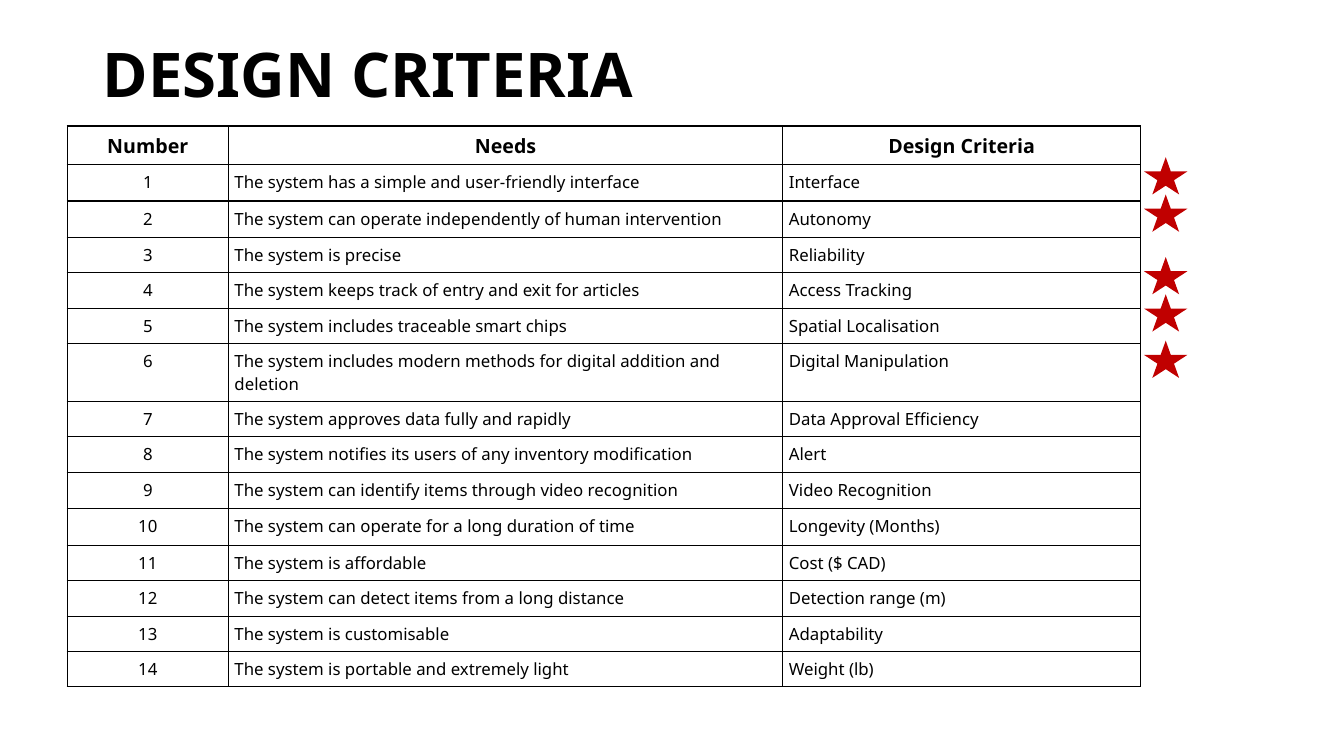
from dataclasses import dataclass

from lxml import etree
from pptx import Presentation
from pptx.dml.color import RGBColor
from pptx.enum.shapes import MSO_SHAPE
from pptx.enum.text import MSO_ANCHOR, PP_ALIGN
from pptx.oxml.ns import qn
from pptx.util import Emu, Inches, Pt

STAR = MSO_SHAPE.STAR_5_POINT
TOP = MSO_ANCHOR.TOP
LEFT, CENTER = PP_ALIGN.LEFT, PP_ALIGN.CENTER

BLACK = RGBColor(0x00, 0x00, 0x00)
WHITE = RGBColor(0xFF, 0xFF, 0xFF)
RED = RGBColor(0xC0, 0x00, 0x00)
FONT = "Noto Sans"

# Slide grid: 40 columns by 30 rows
WIDTH, HEIGHT = Inches(13.33), Inches(7.5)
COLS, ROWS = 40, 30
WIDTHS = (4.8, 16.5, 10.65)
HEAD, TALL, SHORT = 1, 1.44, 0.92
PAD = Inches(0.06)


@dataclass
class Need:
    text: str
    label: str
    height: float = SHORT


NEEDS = [
    Need("The system has a simple and user-friendly interface", "Interface", TALL),
    Need("The system can operate independently of human intervention", "Autonomy", TALL),
    Need("The system is precise", "Reliability"),
    Need("The system keeps track of entry and exit for articles", "Access Tracking", TALL),
    Need("The system includes traceable smart chips", "Spatial Localisation"),
    Need("The system includes modern methods for digital addition and deletion",
         "Digital Manipulation", TALL),
    Need("The system approves data fully and rapidly", "Data Approval Efficiency"),
    Need("The system notifies its users of any inventory modification", "Alert", TALL),
    Need("The system can identify items through video recognition", "Video Recognition", TALL),
    Need("The system can operate for a long duration of time", "Longevity (Months)", TALL),
    Need("The system is affordable", "Cost ($ CAD)"),
    Need("The system can detect items from a long distance", "Detection range (m)", TALL),
    Need("The system is customisable", "Adaptability"),
    Need("The system is portable and extremely light", "Weight (lb)"),
]
STARS = (6.24, 7.72, 10.2, 11.68, 13.52)


def col(count: float) -> Emu:
    return Emu(round(WIDTH * count / COLS))


def row(count: float) -> Emu:
    return Emu(round(HEIGHT * count / ROWS))


def write(frame, text: str, size: float, bold: bool, align) -> None:
    para = frame.paragraphs[0]
    para.alignment = align
    run = para.add_run()
    run.text = text
    font = run.font
    font.name, font.size, font.bold = FONT, Pt(size), bold
    font.color.rgb = BLACK


def edge(cell) -> None:
    """Draw a thin black line on all four sides of a cell."""
    props = cell._tc.get_or_add_tcPr()
    for index, side in enumerate(("a:lnL", "a:lnR", "a:lnT", "a:lnB")):
        line = etree.Element(qn(side), w=str(Pt(1)))
        fill = etree.SubElement(line, qn("a:solidFill"))
        etree.SubElement(fill, qn("a:srgbClr"), val=str(BLACK))
        props.insert(index, line)


def fill_cell(cell, text: str, head: bool, align) -> None:
    cell.margin_left = cell.margin_right = PAD
    cell.margin_top = cell.margin_bottom = PAD
    cell.vertical_anchor = TOP
    cell.fill.solid()
    cell.fill.fore_color.rgb = WHITE
    edge(cell)
    write(cell.text_frame, text, 14 if head else 12, head, align)


def add_title(slide) -> None:
    title = slide.shapes.title
    title.left, title.top = col(2.76), row(1.56)
    title.width, title.height = col(34.5), row(5.8)
    frame = title.text_frame
    frame.word_wrap = True
    frame.vertical_anchor = TOP
    write(frame, "DESIGN CRITERIA", 44, True, LEFT)
    frame.paragraphs[0].line_spacing = 0.9


def add_needs(slide) -> None:
    sizes = [HEAD] + [need.height for need in NEEDS]
    lines = [("Number", "Needs", "Design Criteria")]
    lines += [(str(num), need.text, need.label) for num, need in enumerate(NEEDS, 1)]
    table = slide.shapes.add_table(len(lines), len(WIDTHS), col(2), row(5),
                                   col(sum(WIDTHS)), row(sum(sizes))).table
    table.first_row = table.horz_banding = False
    for part, width in zip(table.columns, WIDTHS):
        part.width = col(width)
    for y, (line, size) in enumerate(zip(lines, sizes)):
        table.rows[y].height = row(size)
        for x, text in enumerate(line):
            align = CENTER if y == 0 or x == 0 else LEFT
            fill_cell(table.cell(y, x), text, y == 0, align)


def add_star(slide, top: float) -> None:
    star = slide.shapes.add_shape(STAR, col(34.05), row(top), col(1.29), row(1.48))
    star.shadow.inherit = False
    star.fill.solid()
    star.fill.fore_color.rgb = RED
    star.line.fill.background()


def main() -> None:
    deck = Presentation()
    deck.slide_width, deck.slide_height = WIDTH, HEIGHT
    slide = deck.slides.add_slide(deck.slide_layouts[5])
    add_title(slide)
    add_needs(slide)
    # Stars beside the key criteria
    for top in STARS:
        add_star(slide, top)
    deck.save("out.pptx")


if __name__ == "__main__":
    main()
